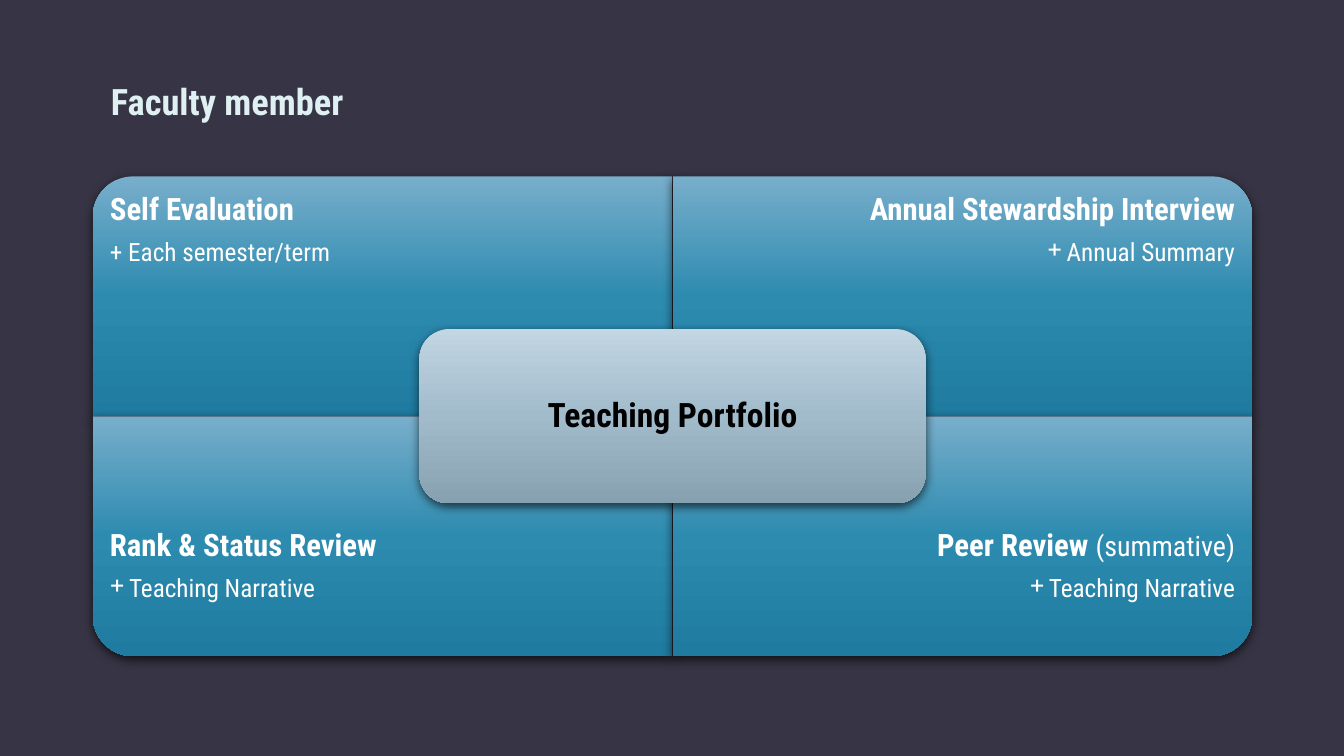
from math import cos, pi, sin

from pptx import Presentation
from pptx.dml.color import RGBColor
from pptx.enum.shapes import MSO_SHAPE
from pptx.enum.text import MSO_ANCHOR, MSO_AUTO_SIZE, PP_ALIGN
from pptx.oxml import parse_xml
from pptx.oxml.ns import nsdecls
from pptx.util import Inches, Pt

FONT = "Roboto Condensed"
COLORS = {"background": "373545", "title": "DEF0F2", "light": "FFFFFF", "dark": "000000"}
GRADIENTS = {
    "panel": ("78AECB", "2D8BB0", "1F7BA0"),
    "center": ("C2D6E3", "A1BBCB", "88A1B1"),
}
MID_X, MID_Y = 6.67, 4.13
PANEL_W, PANEL_H, CORNER = 5.75, 2.38, 0.4
CENTER_W, CENTER_H = 5.02, 1.73
ARC_STEPS = 16

PANELS = [
    (-1, -1, "Self Evaluation", "", "+ Each semester/term", False),
    (1, -1, "Annual Stewardship Interview", "", "Annual Summary", True),
    (-1, 1, "Rank & Status Review", "", "Teaching Narrative", True),
    (1, 1, "Peer Review ", "(summative)", "Teaching Narrative", True),
]


def style_shape(sp, gradient):
    """Give a shape a vertical gradient, no outline and a soft shadow."""
    sp.line.fill.background()
    sp.fill.gradient()
    sp.fill.gradient_angle = 270
    stops = "".join(
        f'<a:gs pos="{i * 50000}"><a:srgbClr val="{color}"/></a:gs>'
        for i, color in enumerate(GRADIENTS[gradient])
    )
    props = sp.element.spPr
    old = props.find(".//{*}gsLst")
    old.getparent().replace(old, parse_xml(f'<a:gsLst {nsdecls("a")}>{stops}</a:gsLst>'))
    sp.shadow.inherit = False
    props.find("{*}effectLst").append(parse_xml(
        f'<a:outerShdw {nsdecls("a")} blurRad="{Pt(7)}" dist="{Pt(2.2)}" dir="5400000" '
        'algn="ctr" rotWithShape="0"><a:srgbClr val="000000"><a:alpha val="63000"/>'
        '</a:srgbClr></a:outerShdw>'
    ))


def set_insets(tf, side, top, bottom):
    """Set the inner margins of a text frame and let it wrap."""
    tf.word_wrap = True
    tf.margin_left = tf.margin_right = Inches(side)
    tf.margin_top, tf.margin_bottom = Inches(top), Inches(bottom)


def format_paragraph(p, size, color, bold, align, after=0, spacing=0.9):
    """Set the font, alignment and spacing of a paragraph."""
    p.alignment = align
    p.line_spacing = spacing
    p.space_before, p.space_after = Pt(0), Pt(after)
    f = p.font
    f.name, f.size, f.bold = FONT, Pt(size), bold
    f.color.rgb = RGBColor.from_string(COLORS[color])


def add_bullet(p, char):
    """Put a hanging bullet character before a paragraph."""
    props = p._p.get_or_add_pPr()
    props.set("marL", str(Inches(0.19)))
    props.set("indent", str(-Inches(0.19)))
    props.append(parse_xml(f'<a:buChar {nsdecls("a")} char="{char}"/>'))


def add_title(s, text):
    """Place and format the slide title."""
    title = s.shapes.title
    title.left, title.top = Inches(1), Inches(0.73)
    title.width, title.height = Inches(8.74), Inches(0.54)
    tf = title.text_frame
    tf.text = text
    tf.auto_size = MSO_AUTO_SIZE.NONE
    tf.vertical_anchor = MSO_ANCHOR.MIDDLE
    set_insets(tf, 0.1, 0.05, 0.05)
    format_paragraph(tf.paragraphs[0], 26, "title", True, PP_ALIGN.LEFT, spacing=1)


def add_panel(s, dx, dy, heading, note, detail, bulleted):
    """Draw one quadrant, rounded at its outer corner, with heading and detail."""
    edge_x, edge_y = MID_X + dx * PANEL_W, MID_Y + dy * PANEL_H
    angles = [pi / 2 * i / ARC_STEPS for i in range(ARC_STEPS + 1)]
    arc = [(edge_x - dx * CORNER * (1 - sin(a)), edge_y - dy * CORNER * (1 - cos(a)))
           for a in angles]
    points = [(MID_X, edge_y), *arc, (edge_x, MID_Y)]
    builder = s.shapes.build_freeform(Inches(MID_X), Inches(MID_Y))
    builder.add_line_segments([(Inches(x), Inches(y)) for x, y in points], close=True)
    sp = builder.convert_to_shape()
    style_shape(sp, "panel")

    tf = sp.text_frame
    is_top = dy < 0
    tf.vertical_anchor = MSO_ANCHOR.TOP if is_top else MSO_ANCHOR.MIDDLE
    set_insets(tf, 0.17, *((0.17, 0.77) if is_top else (0.77, 0.17)))
    align = PP_ALIGN.LEFT if dx < 0 else PP_ALIGN.RIGHT
    p = tf.paragraphs[0]
    p.add_run().text = heading
    format_paragraph(p, 22, "light", True, align, after=9)
    if note:
        r = p.add_run()
        r.text = note
        r.font.size, r.font.bold = Pt(20), False
    p = tf.add_paragraph()
    p.add_run().text = detail
    if bulleted:
        add_bullet(p, "+")
    format_paragraph(p, 18, "light", False, align, after=3)


def add_center(s, text):
    """Draw the rounded box over the meeting point of the quadrants."""
    sp = s.shapes.add_shape(
        MSO_SHAPE.ROUNDED_RECTANGLE,
        Inches(MID_X - CENTER_W / 2), Inches(MID_Y - CENTER_H / 2),
        Inches(CENTER_W), Inches(CENTER_H),
    )
    sp.adjustments[0] = 0.17
    style_shape(sp, "center")
    tf = sp.text_frame
    tf.text = text
    tf.vertical_anchor = MSO_ANCHOR.MIDDLE
    set_insets(tf, 0.18, 0.18, 0.18)
    format_paragraph(tf.paragraphs[0], 24, "dark", True, PP_ALIGN.CENTER)


def main():
    """Build the slide and save it."""
    prs = Presentation()
    prs.slide_width, prs.slide_height = Inches(13.33), Inches(7.5)
    s = prs.slides.add_slide(prs.slide_layouts[5])
    s.background.fill.solid()
    s.background.fill.fore_color.rgb = RGBColor.from_string(COLORS["background"])
    add_title(s, "Faculty member")
    for panel in PANELS:
        add_panel(s, *panel)
    add_center(s, "Teaching Portfolio")
    prs.save("out.pptx")


if __name__ == "__main__":
    main()
